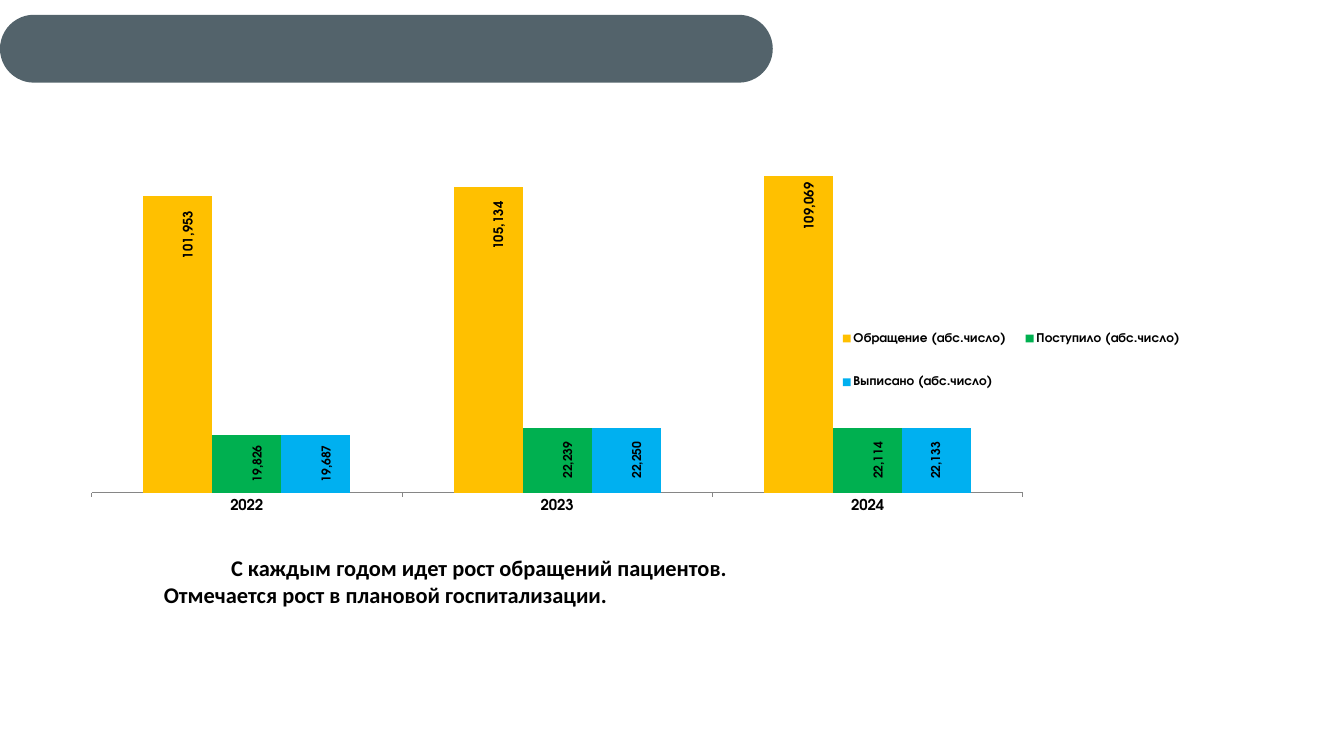
from lxml import etree
from pptx import Presentation
from pptx.chart.data import CategoryChartData
from pptx.dml.color import RGBColor
from pptx.enum.chart import XL_CHART_TYPE as ChartType
from pptx.enum.chart import XL_LABEL_POSITION as LabelPos
from pptx.enum.chart import XL_LEGEND_POSITION as LegendPos
from pptx.enum.chart import XL_TICK_LABEL_POSITION as TickLabels
from pptx.enum.chart import XL_TICK_MARK as TickMark
from pptx.enum.shapes import MSO_SHAPE as Shape
from pptx.enum.text import PP_ALIGN as Align
from pptx.oxml import parse_xml
from pptx.oxml.ns import nsdecls, qn
from pptx.util import Inches, Pt

SLATE = RGBColor(0x41, 0x53, 0x5C)
BLACK = RGBColor(0, 0, 0)
GREY = RGBColor(0x86, 0x86, 0x86)
AMBER = RGBColor(0xFF, 0xC0, 0x00)
GREEN = RGBColor(0x00, 0xB0, 0x50)
BLUE = RGBColor(0x00, 0xB0, 0xF0)
CHART_FONT, TEXT_FONT = "TeX Gyre Adventor", "Calibri"

YEARS = ["2022", "2023", "2024"]
# name, values, colour, label size, label position, label shifts (shares of the chart)
SERIES = [
    ("Обращение (абс.число)", (101953, 105134, 109069), AMBER, 14, LabelPos.INSIDE_END,
     ((0.01, 0.03), (0.01, 0.03), (0.01, 0.01))),
    ("Поступило (абс.число)", (19826, 22239, 22114), GREEN, 13, LabelPos.CENTER,
     ((0.01, 0), (0.01, 0), (0.01, 0))),
    ("Выписано (абс.число)", (19687, 22250, 22133), BLUE, 13, LabelPos.CENTER,
     ((0.01, 0), (0.01, 0), (0, 0))),
]
CONCLUSIONS = ["\tС каждым годом идет рост обращений пациентов.",
               "Отмечается рост в плановой госпитализации."]


def set_font(font, size, name=CHART_FONT):
    font.size, font.name, font.bold = Pt(size), name, True
    font.color.rgb = BLACK


def layout_xml(inner=False, edge=False, **parts):
    """Manual chart layout; parts are x, y, w, h as shares of the chart."""
    rows = '<c:layoutTarget val="inner"/>' if inner else ""
    if edge:
        rows += '<c:xMode val="edge"/><c:yMode val="edge"/>'
    rows += "".join(f'<c:{k} val="{v}"/>' for k, v in parts.items())
    return parse_xml(f'<c:layout {nsdecls("c")}><c:manualLayout>{rows}'
                     "</c:manualLayout></c:layout>")


def place(parent, after, layout):
    """Put a layout into parent, after the named child or at the start."""
    for old in parent.findall(qn("c:layout")):
        parent.remove(old)
    if after is None:
        parent.insert(0, layout)
    else:
        parent.find(qn(after)).addnext(layout)


prs = Presentation()
prs.slide_width, prs.slide_height = Inches(20), Inches(11.25)
s = prs.slides.add_slide(prs.slide_layouts[6])

# Header bar
bar = s.shapes.add_shape(Shape.ROUNDED_RECTANGLE, 0, Inches(0.22), Inches(11.5), Inches(1.01))
bar.adjustments[0] = 0.5
bar.shadow.inherit = False
bar.fill.solid()
bar.fill.fore_color.rgb = SLATE
bar.line.fill.background()
colour = bar.fill._xPr.find(qn("a:solidFill"))[0]
etree.SubElement(colour, qn("a:alpha"), val="90000")

# Conclusions, with a tab stop at one inch
tf = s.shapes.add_textbox(Inches(2.34), Inches(8.2), Inches(13.66), Inches(2.58)).text_frame
tf.word_wrap = True
for i, line in enumerate(CONCLUSIONS):
    p = tf.paragraphs[0] if i == 0 else tf.add_paragraph()
    p.add_run().text = line
    p.alignment = Align.JUSTIFY
    tabs = etree.SubElement(p._p.get_or_add_pPr(), qn("a:tabLst"))
    etree.SubElement(tabs, qn("a:tab"), pos=str(Inches(1)), algn="l")
    set_font(p.font, 24, TEXT_FONT)

# Chart
data = CategoryChartData(number_format="#,##0")
data.categories = YEARS
for name, values, *_ in SERIES:
    data.add_series(name, values)
chart = s.shapes.add_chart(ChartType.COLUMN_CLUSTERED, Inches(1.02), Inches(2.03),
                           Inches(17.11), Inches(5.7), data).chart
chart.has_title = False
chart.font.size, chart.font.name = Pt(18), TEXT_FONT
chart.font.color.rgb = BLACK
plot = chart.plots[0]
plot.gap_width, plot.overlap, plot.vary_by_categories = 150, 0, False
place(chart._chartSpace.chart.plotArea, None,
      layout_xml(inner=True, edge=True, x=0.02, y=0.02, w=0.81, h=0.91))

# Axes
cat_axis, val_axis = chart.category_axis, chart.value_axis
cat_axis.major_tick_mark = TickMark.OUTSIDE
cat_axis.tick_label_position = TickLabels.LOW
cat_axis.format.line.color.rgb = GREY
set_font(cat_axis.tick_labels.font, 16)
val_axis.minimum_scale, val_axis.maximum_scale = 0, 120000
val_axis.has_major_gridlines = False
val_axis.visible = False

# Legend
chart.has_legend = True
chart.legend.position = LegendPos.RIGHT
chart.legend.include_in_layout = False
set_font(chart.legend.font, 14)
place(chart.legend._element, "c:legendPos", layout_xml(edge=True, x=0.66, y=0.43, w=0.32, h=0.31))

# Columns with upright labels and no leader lines
for series, (_, _, color, size, position, shifts) in zip(plot.series, SERIES):
    series.format.fill.solid()
    series.format.fill.fore_color.rgb = color
    series.data_labels.show_value = True
    set_font(series.data_labels.font, size)
    for i in range(len(YEARS)):
        label = series.points[i].data_label
        set_font(label.font, size)
        label.position = position
    for node, (dx, dy) in zip(series._element.iter(qn("c:dLbl")), shifts):
        place(node, "c:idx", layout_xml(x=dx, y=dy))
    for body in series._element.iter(qn("a:bodyPr")):
        body.set("rot", "-5400000")
        body.set("vert", "horz")
    for leader in series._element.iter(qn("c:showLeaderLines")):
        leader.set("val", "0")

prs.save("out.pptx")
